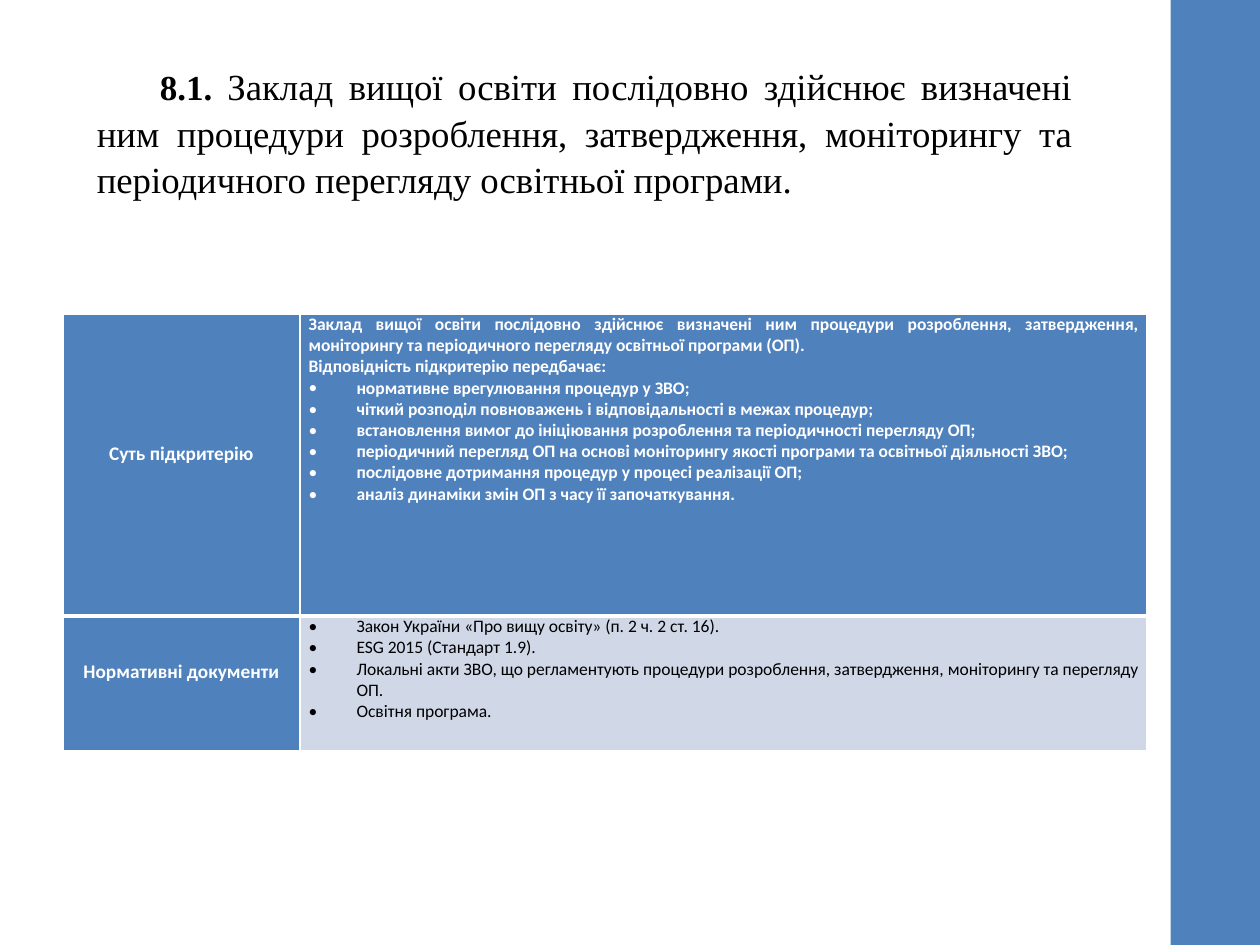
"""Builds the slide on subcriterion 8.1: heading, side band and criteria table."""
from lxml.etree import SubElement
from pptx import Presentation
from pptx.dml.color import RGBColor
from pptx.enum.shapes import MSO_SHAPE
from pptx.enum.text import MSO_ANCHOR, PP_ALIGN
from pptx.oxml.ns import qn
from pptx.util import Inches, Pt

BLUE, PALE, WHITE, BLACK = "4F81BD", "D0D8E8", "FFFFFF", "000000"


def paint(color_format, hex_color):
    color_format.rgb = RGBColor.from_string(hex_color)


def write(paragraph, wording, color, **style):
    run = paragraph.add_run()
    run.text = wording
    for attribute, value in style.items():
        setattr(run.font, attribute, value)
    paint(run.font.color, color)


deck = Presentation()
deck.slide_width, deck.slide_height = Inches(10), Inches(7.5)
W, H = deck.slide_width, deck.slide_height
slide = deck.slides.add_slide(deck.slide_layouts[6])

heading = slide.shapes.add_textbox(int(W * 0.067), int(H * 0.059), int(W * 0.794), int(H * 0.2))
heading.text_frame.word_wrap = True
statement = heading.text_frame.paragraphs[0]
statement.alignment = PP_ALIGN.JUSTIFY
statement.line_spacing = 1.05
for wording, size, bold in [
    ("\t", 20, False),
    ("8.1. ", 20, True),
    ("Заклад вищої освіти послідовно здійснює визначені ним процедури розроблення, "
     "затвердження, моніторингу та періодичного перегляду освітньої програми.", 21, False),
]:
    write(statement, wording, BLACK, name="Times New Roman", size=Pt(size), bold=bold)

band_width = int(W * 0.071)
band = slide.shapes.add_shape(MSO_SHAPE.RECTANGLE, W - band_width, 0, band_width, H)
band.shadow.inherit = False
band.fill.solid()
paint(band.fill.fore_color, BLUE)
band.line.fill.background()

criteria = [
    {"label": "Суть підкритерію", "fill": BLUE, "color": WHITE, "bold": True, "height": 0.32,
     "intro": [
         "Заклад вищої освіти послідовно здійснює визначені ним процедури розроблення, "
         "затвердження, моніторингу та періодичного перегляду освітньої програми (ОП).",
         "Відповідність підкритерію передбачає:"],
     "points": [
         "нормативне врегулювання процедур у ЗВО;",
         "чіткий розподіл повноважень і відповідальності в межах процедур;",
         "встановлення вимог до ініціювання розроблення та періодичності перегляду ОП;",
         "періодичний перегляд ОП на основі моніторингу якості програми та освітньої діяльності ЗВО;",
         "послідовне дотримання процедур у процесі реалізації ОП;",
         "аналіз динаміки змін ОП з часу її започаткування."]},
    {"label": "Нормативні документи", "fill": PALE, "color": BLACK, "bold": False, "height": 0.142,
     "intro": [],
     "points": [
         "Закон України «Про вищу освіту» (п. 2 ч. 2 ст. 16).",
         "ESG 2015 (Стандарт 1.9).",
         "Локальні акти ЗВО, що регламентують процедури розроблення, затвердження, "
         "моніторингу та перегляду ОП.",
         "Освітня програма."]},
]
column_shares = [0.188, 0.672]
table = slide.shapes.add_table(
    len(criteria), len(column_shares), int(W * 0.05), int(H * 0.332),
    int(W * sum(column_shares)), int(H * sum(row["height"] for row in criteria))).table
for column, share in zip(table.columns, column_shares):
    column.width = int(W * share)

label_format = {"vertical_anchor": MSO_ANCHOR.MIDDLE, "margin_bottom": Inches(0.21)}
detail_format = {"vertical_anchor": MSO_ANCHOR.TOP, "margin_bottom": 0}
shared_format = {"margin_left": Inches(0.07), "margin_right": Inches(0.07), "margin_top": 0}

for index, criterion in enumerate(criteria):
    table.rows[index].height = int(H * criterion["height"])
    label, detail = table.cell(index, 0), table.cell(index, 1)
    for cell, fill, layout in [(label, BLUE, label_format),
                               (detail, criterion["fill"], detail_format)]:
        for attribute, value in {**shared_format, **layout}.items():
            setattr(cell, attribute, value)
        weights = {"lnL": 1, "lnR": 1, "lnT": 3 if index else 1, "lnB": 1 if index else 3}
        for side, weight in weights.items():
            border = SubElement(cell._tc.get_or_add_tcPr(), qn(f"a:{side}"), w=str(Pt(weight)))
            SubElement(SubElement(border, qn("a:solidFill")), qn("a:srgbClr"), val=WHITE)
        cell.fill.solid()
        paint(cell.fill.fore_color, fill)

    title = label.text_frame.paragraphs[0]
    title.alignment = PP_ALIGN.CENTER
    title.line_spacing = 1.15
    write(title, criterion["label"], WHITE, name="Calibri", size=Pt(11), bold=True)

    for number, wording in enumerate(criterion["intro"] + criterion["points"]):
        frame = detail.text_frame
        line = frame.add_paragraph() if number else frame.paragraphs[0]
        line.alignment = PP_ALIGN.JUSTIFY
        if number >= len(criterion["intro"]):
            properties = line._p.get_or_add_pPr()
            properties.set("marL", str(Inches(0.38)))
            properties.set("indent", str(-Inches(0.38)))
            SubElement(properties, qn("a:buFont"), typeface="Calibri")
            SubElement(properties, qn("a:buChar"), char="•")
            tabs = SubElement(properties, qn("a:tabLst"))
            SubElement(tabs, qn("a:tab"), pos=str(Inches(0.5)), algn="l")
        write(line, wording, criterion["color"], name="Calibri", size=Pt(10), bold=criterion["bold"])

deck.save("out.pptx")
